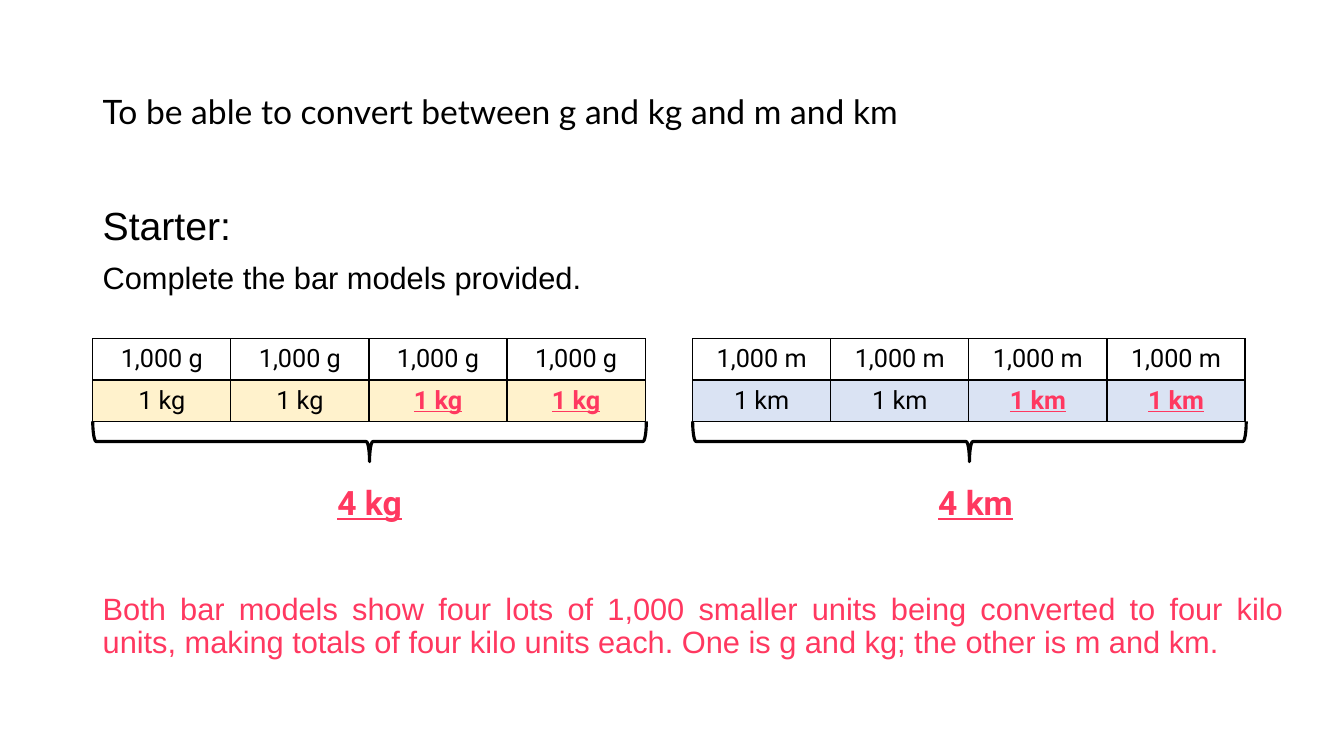
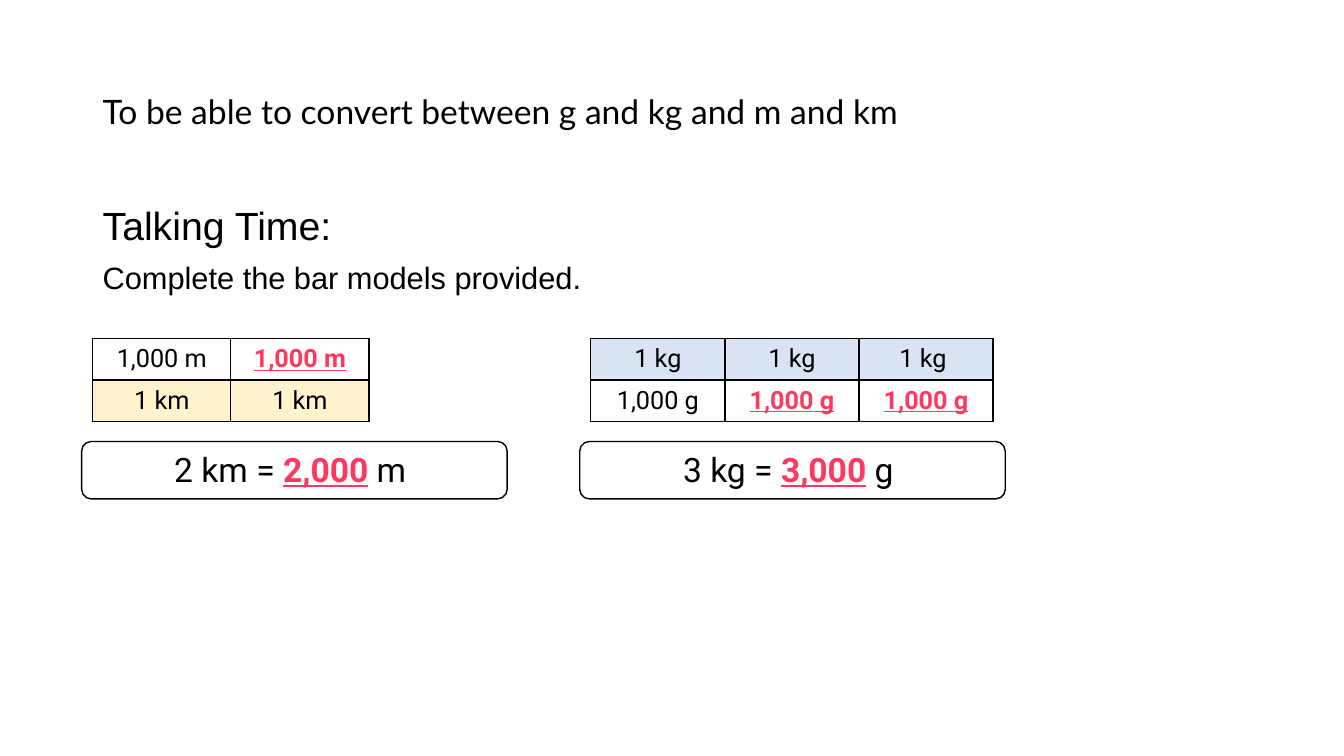
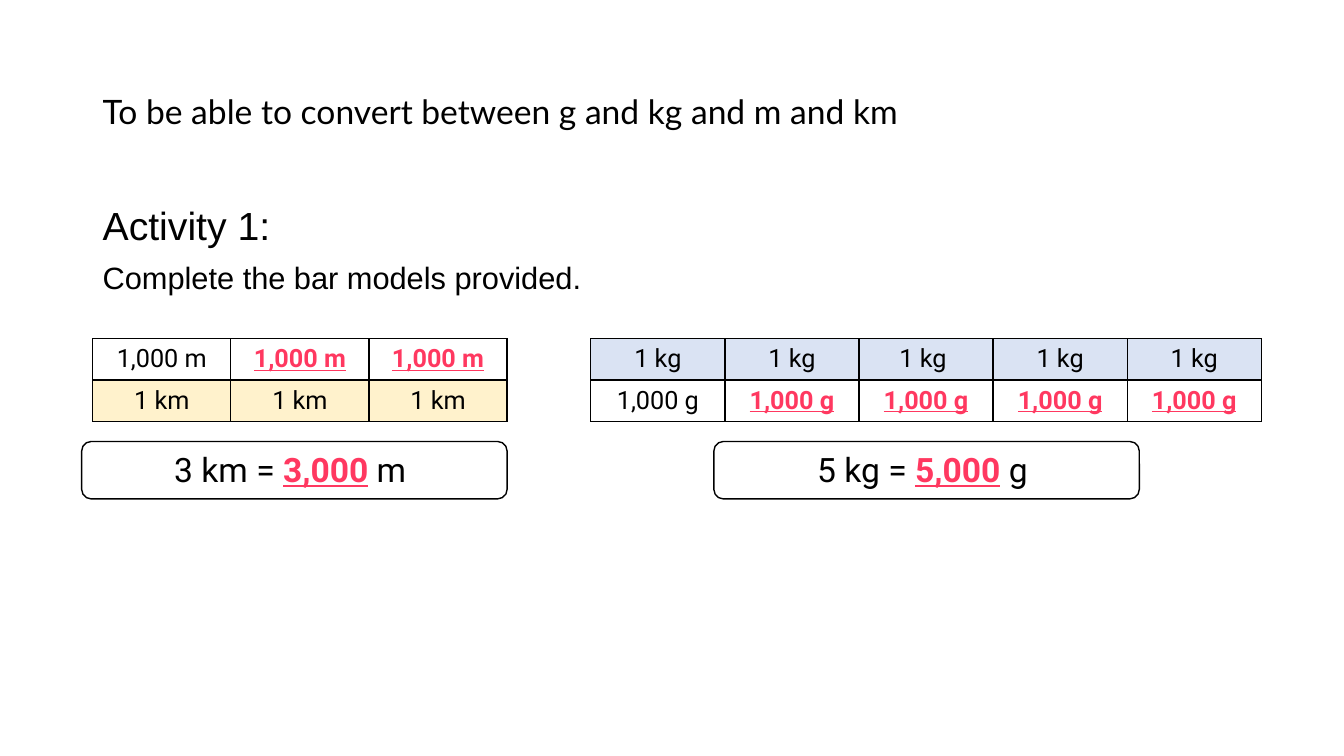
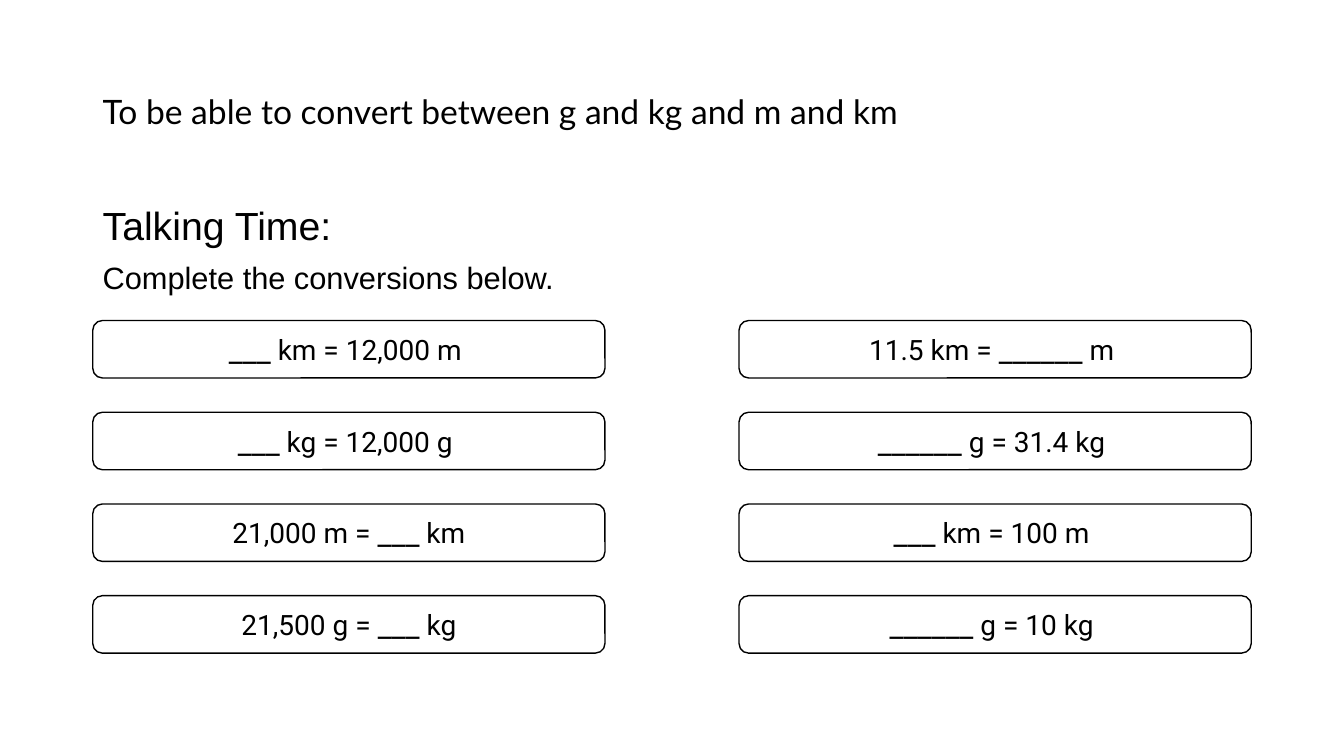
from lxml.etree import SubElement
from pptx import Presentation
from pptx.dml.color import RGBColor
from pptx.enum.shapes import MSO_SHAPE
from pptx.enum.text import MSO_ANCHOR, PP_ALIGN
from pptx.oxml.ns import qn
from pptx.util import Inches, Pt

BLACK, WHITE, ANSWER = "000000", "FFFFFF", "FF3860"
YELLOW, BLUE = "FFF2CC", "DAE3F3"
OBJECTIVE = "To be able to convert between g and kg and m and km"
BAR_TASK = "Complete the bar models provided."
MODEL_TOP, ROW_HEIGHT = 3.36, 0.41
BOX_HEIGHT = 0.57


def color(hex_string):
    return RGBColor.from_string(hex_string)


def write(paragraph, text, size, font="Roboto", ink=BLACK, align=PP_ALIGN.CENTER):
    """Parts between asterisks are answers, or blanks to fill in."""
    paragraph.alignment = align
    for index, part in enumerate(text.split("*")):
        if not part:
            continue
        run = paragraph.add_run()
        run.text = part
        marked = index % 2 == 1
        blank = part.startswith("_")
        run.font.size = Pt(size)
        run.font.name = "Calibri" if blank else font
        run.font.bold = marked
        run.font.underline = marked and not blank
        run.font.color.rgb = color(ANSWER if marked and not blank else ink)


# Bar models: left, column width, rows of (fill, cells)
# Conversions: left, top, width, text size, anchor, text
top, middle = MSO_ANCHOR.TOP, MSO_ANCHOR.MIDDLE
left_conversions = ["*___* km = 12,000 m ", "*___* kg = 12,000 g ",
                    "21,000 m = *___* km", "21,500 g = *___* kg"]
right_conversions = ["11.5 km = *______* m ", "*______* g = 31.4 kg ",
                     "*___* km = 100 m ", "*______* g = 10 kg "]
lessons = [
    {
        "heading": "Starter:",
        "task": BAR_TASK,
        "models": [
            (0.92, 1.37, [(WHITE, ["1,000 g"] * 4), (YELLOW, ["1 kg"] * 2 + ["*1 kg*"] * 2)]),
            (6.87, 1.37, [(WHITE, ["1,000 m"] * 4), (BLUE, ["1 km"] * 2 + ["*1 km*"] * 2)]),
        ],
        "totals": [(0.92, 3.16, 1.01, "*4 kg*"), (6.87, 9.12, 1.11, "*4 km*")],
        "conclusion": "Both bar models show four lots of 1,000 smaller units being converted "
                      "to four kilo units, making totals of four kilo units each. "
                      "One is g and kg; the other is m and km.",
    },
    {
        "heading": "Talking Time:",
        "task": BAR_TASK,
        "models": [
            (0.92, 1.37, [(WHITE, ["1,000 m", "*1,000 m*"]), (YELLOW, ["1 km"] * 2)]),
            (5.86, 1.33, [(BLUE, ["1 kg", "1 kg", "1 kg "]),
                          (WHITE, ["1,000 g"] + ["*1,000 g*"] * 2)]),
        ],
        "conversions": [(0.81, 4.38, 4.22, 24, top, "2 km = *2,000* m "),
                        (5.75, 4.38, 4.22, 24, top, "3 kg = *3,000* g ")],
    },
    {
        "heading": "Activity 1:",
        "task": BAR_TASK,
        "models": [
            (0.92, 1.37, [(WHITE, ["1,000 m"] + ["*1,000 m*"] * 2), (YELLOW, ["1 km"] * 3)]),
            (5.86, 1.33, [(BLUE, ["1 kg", "1 kg", "1 kg ", "1 kg", "1 kg"]),
                          (WHITE, ["1,000 g"] + ["*1,000 g*"] * 4)]),
        ],
        "conversions": [(0.81, 4.38, 4.22, 24, top, "3 km = *3,000* m "),
                        (7.08, 4.38, 4.22, 24, top, "5 kg = *5,000* g ")],
    },
    {
        "heading": "Talking Time:",
        "task": "Complete the conversions below.",
        "conversions": [
            (left, 3.18 + 0.91 * row, 5.08, 20, middle, text)
            for left, texts in ((0.92, left_conversions), (7.33, right_conversions))
            for row, text in enumerate(texts)
        ],
    },
]

prs = Presentation()
prs.slide_width, prs.slide_height = Inches(13.33), Inches(7.5)

for lesson in lessons:
    slide = prs.slides.add_slide(prs.slide_layouts[6])

    # Objective, heading with task, and conclusion
    passages = [
        (0.4, 9.6, 1.45, middle, PP_ALIGN.LEFT, [(OBJECTIVE, 24, "Lato", BLACK)]),
        (2, 11.91, 1.2, top, PP_ALIGN.JUSTIFY,
         [(lesson["heading"], 28, "Arial", BLACK), (lesson["task"], 22, "Arial", BLACK)]),
    ]
    if "conclusion" in lesson:
        passages.append((5.84, 11.91, 0.92, top, PP_ALIGN.JUSTIFY,
                         [(lesson["conclusion"], 22, "Arial", ANSWER)]))
    for y, width, height, anchor, align, lines in passages:
        frame = slide.shapes.add_textbox(
            Inches(0.92), Inches(y), Inches(width), Inches(height)).text_frame
        frame.word_wrap = True
        frame.vertical_anchor = anchor
        for index, (text, size, font, ink) in enumerate(lines):
            paragraph = frame.add_paragraph() if index else frame.paragraphs[0]
            paragraph.line_spacing = 0.9
            if index:
                paragraph.space_before = Pt(10)
            write(paragraph, text, size, font, ink, align)

    # Bar models
    for left, column_width, rows in lesson.get("models", []):
        count = len(rows[0][1])
        model = slide.shapes.add_table(
            len(rows), count, Inches(left), Inches(MODEL_TOP),
            Inches(column_width * count), Inches(ROW_HEIGHT * len(rows))).table
        for column in model.columns:
            column.width = Inches(column_width)
        for r, (fill, texts) in enumerate(rows):
            for c, text in enumerate(texts):
                cell = model.cell(r, c)
                cell.vertical_anchor = middle
                write(cell.text_frame.paragraphs[0], text, 18)
                for side in ("a:lnL", "a:lnR", "a:lnT", "a:lnB"):
                    border = SubElement(cell._tc.get_or_add_tcPr(), qn(side), w=str(Pt(1)))
                    SubElement(SubElement(border, qn("a:solidFill")), qn("a:srgbClr"), val=BLACK)
                cell.fill.solid()
                cell.fill.fore_color.rgb = color(fill)

    # Braces, turned to point down, with their totals
    for left, label_left, label_width, total in lesson.get("totals", []):
        span, depth = 5.49, 0.4
        brace = slide.shapes.add_shape(
            MSO_SHAPE.LEFT_BRACE, Inches(left + (span - depth) / 2),
            Inches(4.38 - span / 2), Inches(depth), Inches(span))
        brace.rotation = 270
        brace.shadow.inherit = False
        brace.fill.background()
        brace.line.color.rgb = color(BLACK)
        brace.line.width = Pt(2.25)
        label = slide.shapes.add_textbox(
            Inches(label_left), Inches(4.73), Inches(label_width), Inches(0.5))
        label.text_frame.word_wrap = False
        write(label.text_frame.paragraphs[0], total, 24)

    # Conversion boxes
    for left, y, width, size, anchor, text in lesson.get("conversions", []):
        box = slide.shapes.add_shape(
            MSO_SHAPE.ROUNDED_RECTANGLE, Inches(left), Inches(y),
            Inches(width), Inches(BOX_HEIGHT))
        box.shadow.inherit = False
        box.fill.solid()
        box.fill.fore_color.rgb = color(WHITE)
        box.line.color.rgb = color(BLACK)
        box.line.width = Pt(1)
        box.text_frame.word_wrap = True
        box.text_frame.vertical_anchor = anchor
        write(box.text_frame.paragraphs[0], text, size)

prs.save("out.pptx")
